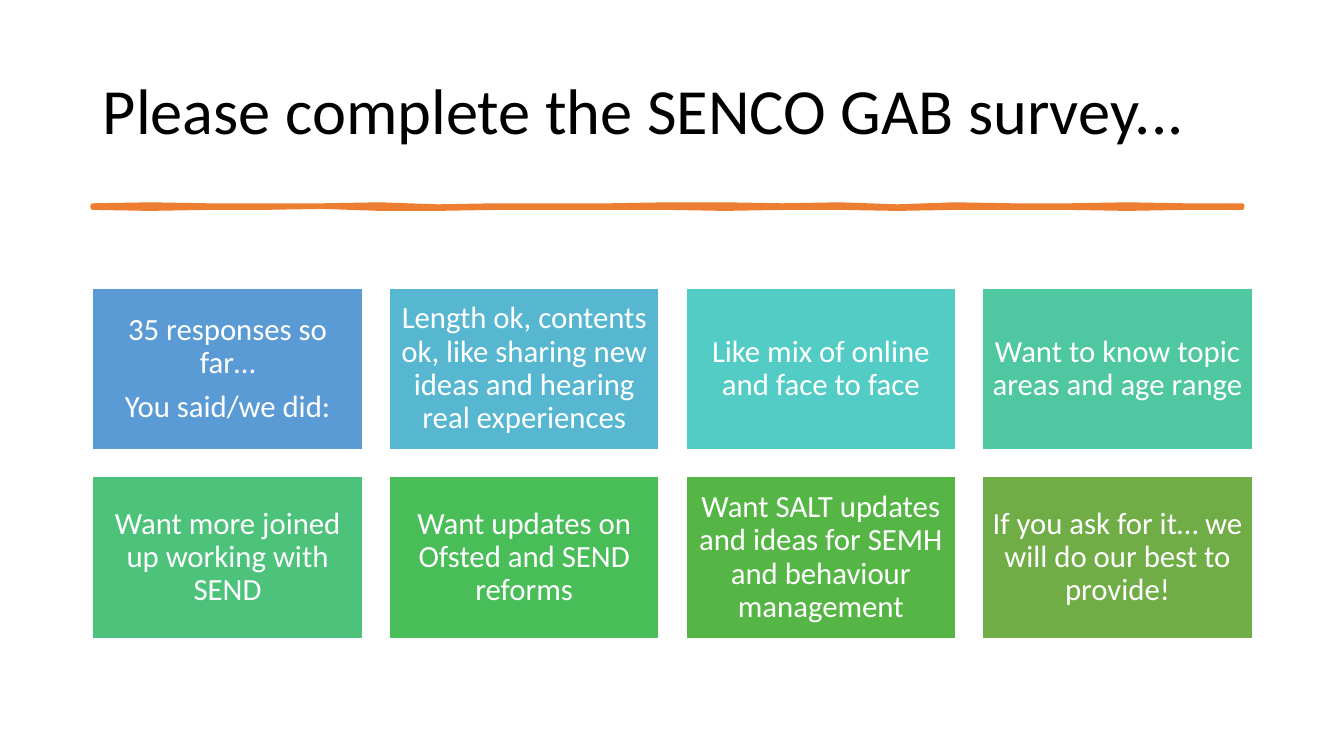
import dataclasses

import pptx
import pptx.dml.color
import pptx.enum.shapes
import pptx.enum.text
import pptx.util

COLORS = {
    "ink": "000000", "white": "FFFFFF", "orange": "ED7D31",
    "blue": "5B9BD5", "sky": "57B7D1", "aqua": "53CCC5", "mint": "4FC7A0",
    "jade": "4CC27B", "green": "48BD58", "leaf": "55B646", "olive": "70AD47",
}
FONT = "Calibri"
ALIGN = pptx.enum.text.PP_ALIGN

# Slide and grid: the gap and row height are shares of a column's width
WIDE, HIGH = pptx.util.Inches(13.33), pptx.util.Inches(7.5)
LEFT, SPAN = pptx.util.Inches(0.92), pptx.util.Inches(11.5)
COLS = 4
GAP, TALL = 0.1, 0.6
COL = SPAN / (COLS + GAP * (COLS - 1))
TOP = HIGH * 0.381


@dataclasses.dataclass
class Card:
    color: str
    lines: list[str]


CARDS = [
    Card("blue", ["35 responses so far…", "You said/we did:"]),
    Card("sky", ["Length ok, contents ok, like sharing new ideas "
                 "and hearing real experiences"]),
    Card("aqua", ["Like mix of online and face to face"]),
    Card("mint", ["Want to know topic areas and age range"]),
    Card("jade", ["Want more joined up working with SEND"]),
    Card("green", ["Want updates on Ofsted and SEND reforms"]),
    Card("leaf", ["Want SALT updates and ideas for SEMH "
                  "and behaviour management"]),
    Card("olive", ["If you ask for it… we will do our best to provide!"]),
]

# Upper and lower edge of the brush stroke, in hundredths of an inch, evenly spaced
UPPER = [204, 203, 204, 204, 204, 203, 205, 204, 204, 204, 203,
         203, 204, 203, 205, 203, 204, 204, 203, 204, 204]
LOWER = [206, 207, 206, 206, 205, 207, 207, 206, 206, 206, 206,
         207, 206, 206, 207, 206, 206, 206, 207, 206, 206]


def rgb(name: str) -> pptx.dml.color.RGBColor:
    return pptx.dml.color.RGBColor.from_string(COLORS[name])


def write(shape, lines: list[str], *, size: float, color: str, align,
          inset: float = 0.1, gap: float = 0) -> None:
    """Fill a shape with paragraphs, centred vertically."""
    frame = shape.text_frame
    frame.text = "\n".join(lines)
    frame.word_wrap = True
    frame.auto_size = pptx.enum.text.MSO_AUTO_SIZE.NONE
    frame.vertical_anchor = pptx.enum.text.MSO_ANCHOR.MIDDLE
    frame.margin_left = frame.margin_right = pptx.util.Inches(inset)
    frame.margin_top = frame.margin_bottom = pptx.util.Inches(min(inset, 0.09))
    for rank, para in enumerate(frame.paragraphs):
        para.alignment = align
        para.line_spacing = 0.9
        para.space_before = pptx.util.Pt(gap if rank else 0)
        para.font.name = FONT
        para.font.size = pptx.util.Pt(size)
        para.font.color.rgb = rgb(color)


def paint(shape, fill: str, line: str, width: float) -> None:
    shape.shadow.inherit = False
    shape.fill.solid()
    shape.fill.fore_color.rgb = rgb(fill)
    shape.line.color.rgb = rgb(line)
    shape.line.width = pptx.util.Pt(width)


def add_brush(slide) -> None:
    """Draw the uneven rule below the title."""
    step = pptx.util.Inches(11.4) / (len(UPPER) - 1)

    def edge(rows: list[int]) -> list[tuple[float, int]]:
        return [(LEFT + i * step, pptx.util.Inches(y / 100)) for i, y in enumerate(rows)]

    dots = edge(UPPER) + edge(LOWER)[::-1]
    build = slide.shapes.build_freeform(*dots[0])
    build.add_line_segments(dots[1:], close=True)
    paint(build.convert_to_shape(), "orange", "orange", 3.25)


def add_card(slide, index: int, card: Card) -> None:
    row, col = divmod(index, COLS)
    box = slide.shapes.add_shape(
        pptx.enum.shapes.MSO_SHAPE.RECTANGLE,
        round(LEFT + col * COL * (1 + GAP)), round(TOP + row * COL * (TALL + GAP)),
        round(COL), round(COL * TALL))
    paint(box, card.color, "white", 1)
    write(box, card.lines, size=22, color="white", align=ALIGN.CENTER,
          inset=0.09, gap=7.7)


def main() -> None:
    deck = pptx.Presentation()
    deck.slide_width, deck.slide_height = WIDE, HIGH
    slide = deck.slides.add_slide(deck.slide_layouts.get_by_name("Title Only"))

    # Title
    title = slide.shapes.title
    title.left, title.top = LEFT, pptx.util.Inches(0.4)
    title.width, title.height = SPAN, pptx.util.Inches(1.45)
    write(title, ["Please complete the SENCO GAB survey..."],
          size=46, color="ink", align=ALIGN.LEFT)

    # Rule and cards
    add_brush(slide)
    for index, card in enumerate(CARDS):
        add_card(slide, index, card)

    deck.save("out.pptx")


if __name__ == "__main__":
    main()
